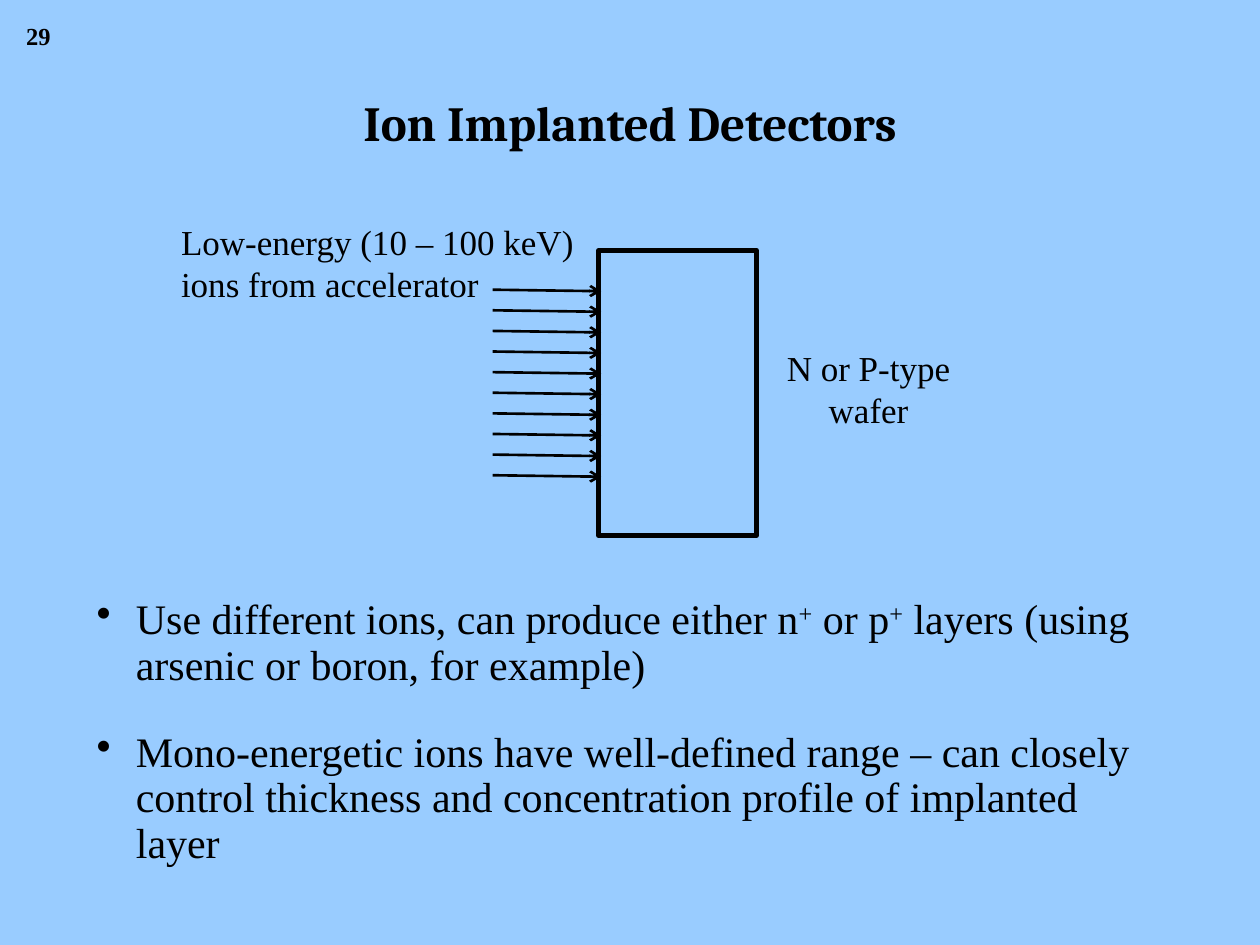
from lxml import etree
from pptx import Presentation
from pptx.dml.color import RGBColor
from pptx.enum.shapes import MSO_CONNECTOR, MSO_SHAPE
from pptx.enum.text import MSO_ANCHOR, PP_ALIGN
from pptx.oxml.ns import qn
from pptx.util import Cm, Pt

LEFT, CENTER = PP_ALIGN.LEFT, PP_ALIGN.CENTER
TOP, MIDDLE = MSO_ANCHOR.TOP, MSO_ANCHOR.MIDDLE
RECT, STRAIGHT = MSO_SHAPE.RECTANGLE, MSO_CONNECTOR.STRAIGHT
COLORS = {"back": "99CCFF", "ink": "000000", "number": "020100"}
SERIF = "Times New Roman"


def color(name):
    return RGBColor.from_string(COLORS[name])


def add_bullet(para, indent):
    props = para._p.get_or_add_pPr()
    props.set("marL", str(Cm(indent)))
    props.set("indent", str(-Cm(indent)))
    etree.SubElement(props, qn("a:buChar")).set("char", "•")


def add_text(slide, box, lines, size=20, font=SERIF, ink="ink", bold=False,
             align=LEFT, anchor=TOP, wrap=False, spacing=None, gap=0, indent=0):
    """Place one paragraph per line; text between ^ marks is superscript."""
    frame = slide.shapes.add_textbox(*map(Cm, box)).text_frame
    frame.word_wrap = wrap
    frame.vertical_anchor = anchor
    for i, line in enumerate(lines):
        para = frame.paragraphs[0] if i == 0 else frame.add_paragraph()
        if indent:
            add_bullet(para, indent)
        para.alignment = align
        para.line_spacing = spacing
        para.space_before = Pt(gap if i else 0)
        for j, part in enumerate(line.split("^")):
            run = para.add_run()
            run.text = part
            run.font.size = Pt(size)
            run.font.name = font
            run.font.bold = bold
            run.font.color.rgb = color(ink)
            if j % 2:
                run._r.get_or_add_rPr().set("baseline", "30000")


def add_arrow(slide, start, end):
    arrow = slide.shapes.add_connector(STRAIGHT, *map(Cm, start + end))
    arrow.line.color.rgb = color("ink")
    arrow.line.width = Pt(1.5)
    tip = etree.SubElement(arrow.line._get_or_add_ln(), qn("a:tailEnd"))
    tip.set("type", "arrow")
    etree.SubElement(arrow._element.spPr, qn("a:effectLst"))


def add_head(slide, left, top, width, height):
    add_text(slide, (0.28, 0.3, 1.07, 0.84), ["29"], size=14, ink="number", bold=True)
    add_text(slide, (left, top, width, height), ["Ion Implanted Detectors"],
             size=28, font="Cambria", bold=True, align=CENTER, anchor=MIDDLE,
             wrap=True, spacing=0.9)


def add_beam(slide, left, top, width, height, count=10):
    """Draw evenly spaced ion arrows, each dipping slightly to the right."""
    step = height / (count - 1)
    for i in range(count):
        y = top + i * step
        add_arrow(slide, (left, y), (left + width, y + 0.03))


def add_diagram(slide, left, top, width, height):
    wafer = slide.shapes.add_shape(
        RECT, Cm(left + 8.67), Cm(top + 0.73), Cm(3.18), Cm(height - 0.73))
    wafer.shadow.inherit = False
    wafer.fill.background()
    wafer.line.color.rgb = color("ink")
    wafer.line.width = Pt(3)
    add_beam(slide, left + 6.53, top + 1.52, 2.19, 3.74)
    add_text(slide, (left, top, 8.48, 1.96),
             ["Low-energy (10 – 100 keV)", "ions from accelerator"])
    add_text(slide, (left + width - 3.84, top + 2.54, 3.84, 1.96),
             ["N or P-type", "wafer"], align=CENTER)


def add_points(slide, left, top, width, height):
    add_text(slide, (left, top, width, height), [
        "Use different ions, can produce either n^+^ or p^+^ layers "
        "(using arsenic or boron, for example)",
        "Mono-energetic ions have well-defined range – can closely control "
        "thickness and concentration profile of implanted layer",
    ], size=24, wrap=True, spacing=0.9, gap=24, indent=0.79)


def main():
    deck = Presentation()
    deck.slide_width, deck.slide_height = Cm(25.4), Cm(19.05)
    slide = deck.slides.add_slide(deck.slide_layouts[6])
    slide.background.fill.solid()
    slide.background.fill.fore_color.rgb = color("back")
    add_head(slide, 1.8, 0.84, 21.8, 3.38)
    add_diagram(slide, 3.4, 4.32, 16.03, 6.47)
    add_points(slide, 1.7, 11.94, 22.02, 5.92)
    deck.save("out.pptx")


if __name__ == "__main__":
    main()
